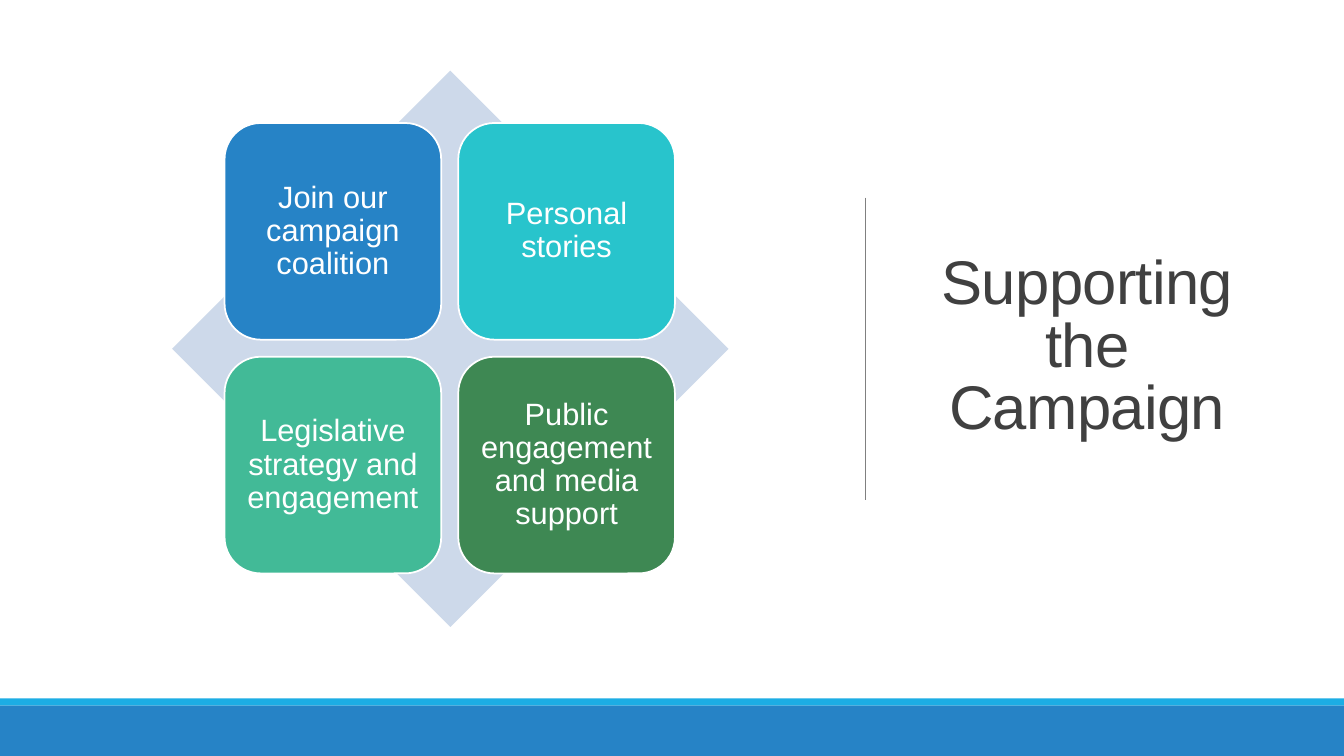
"""Build the campaign support slide with a four-card diamond matrix."""
from dataclasses import dataclass

from lxml import etree
from pptx import Presentation
from pptx.dml.color import RGBColor
from pptx.enum.shapes import MSO_CONNECTOR, MSO_SHAPE
from pptx.enum.text import MSO_ANCHOR, PP_ALIGN
from pptx.oxml.ns import qn
from pptx.util import Cm, Pt

RECT = MSO_SHAPE.RECTANGLE
DIAMOND = MSO_SHAPE.DIAMOND
ROUNDED = MSO_SHAPE.ROUNDED_RECTANGLE
STRAIGHT = MSO_CONNECTOR.STRAIGHT
MIDDLE = MSO_ANCHOR.MIDDLE
CENTER = PP_ALIGN.CENTER

FONT = "Arial"
WHITE = "FFFFFF"
SLIDE_W, SLIDE_H = 33.87, 19.05
CARD_LEFT, CARD_TOP, CARD_SIZE, CARD_PITCH = 5.66, 3.1, 5.46, 5.89


@dataclass
class Block:
    kind: int
    left: float
    top: float
    width: float
    height: float
    fill: str


@dataclass
class Card:
    text: str
    fill: str


BLOCKS = [
    Block(RECT, 0, 17.6, SLIDE_W, 0.18, "1CADE4"),
    Block(RECT, 0, 17.78, SLIDE_W, 1.27, "2683C6"),
    Block(DIAMOND, 4.34, 1.78, 14.02, 14.02, "CDD9EA"),
]
CARDS = [
    Card("Join our campaign coalition", "2683C6"),
    Card("Personal stories", "28C4CC"),
    Card("Legislative strategy and engagement", "42BA97"),
    Card("Public engagement and media support", "3E8853"),
]


def rgb(color: str) -> RGBColor:
    return RGBColor.from_string(color)


def add_block(slide, block: Block):
    sp = slide.shapes.add_shape(block.kind, Cm(block.left), Cm(block.top),
                                Cm(block.width), Cm(block.height))
    sp.shadow.inherit = False
    sp.fill.solid()
    sp.fill.fore_color.rgb = rgb(block.fill)
    sp.line.fill.background()
    return sp


def write(sp, text: str, size: float, color: str, spacing: float):
    tf = sp.text_frame
    tf.text = text
    tf.word_wrap = True
    tf.vertical_anchor = MIDDLE
    p = tf.paragraphs[0]
    p.alignment = CENTER
    p.line_spacing = spacing
    r = p.runs[0]
    r.font.name = FONT
    r.font.size = Pt(size)
    r.font.color.rgb = rgb(color)
    return r


def add_card(slide, card: Card, index: int) -> None:
    row, col = divmod(index, 2)
    sp = add_block(slide, Block(ROUNDED, CARD_LEFT + col * CARD_PITCH,
                                CARD_TOP + row * CARD_PITCH,
                                CARD_SIZE, CARD_SIZE, card.fill))
    sp.line.color.rgb = rgb(WHITE)
    sp.line.width = Pt(1.25)
    tf = sp.text_frame
    tf.margin_left = tf.margin_right = Cm(0.23)
    tf.margin_top = tf.margin_bottom = Cm(0.23)
    write(sp, card.text, 22, WHITE, 0.9)


def add_title(slide, text: str) -> None:
    sp = slide.shapes.add_textbox(Cm(22.71), Cm(1.75), Cm(9.37), Cm(14.05))
    r = write(sp, text, 44, "404040", 0.85)
    r.font._element.set("spc", "-50")


def add_divider(slide) -> None:
    line = slide.shapes.add_connector(STRAIGHT, Cm(21.82), Cm(4.98),
                                      Cm(21.82), Cm(12.6))
    line.line.color.rgb = rgb("808080")
    line.line.width = Pt(0.5)
    etree.SubElement(line._element.spPr, qn("a:effectLst"))


def main() -> None:
    prs = Presentation()
    prs.slide_width, prs.slide_height = Cm(SLIDE_W), Cm(SLIDE_H)
    slide = prs.slides.add_slide(prs.slide_layouts[6])
    add_title(slide, "Supporting the Campaign")
    add_divider(slide)
    for block in BLOCKS:
        add_block(slide, block)
    for index, card in enumerate(CARDS):
        add_card(slide, card, index)
    prs.save("out.pptx")


if __name__ == "__main__":
    main()
